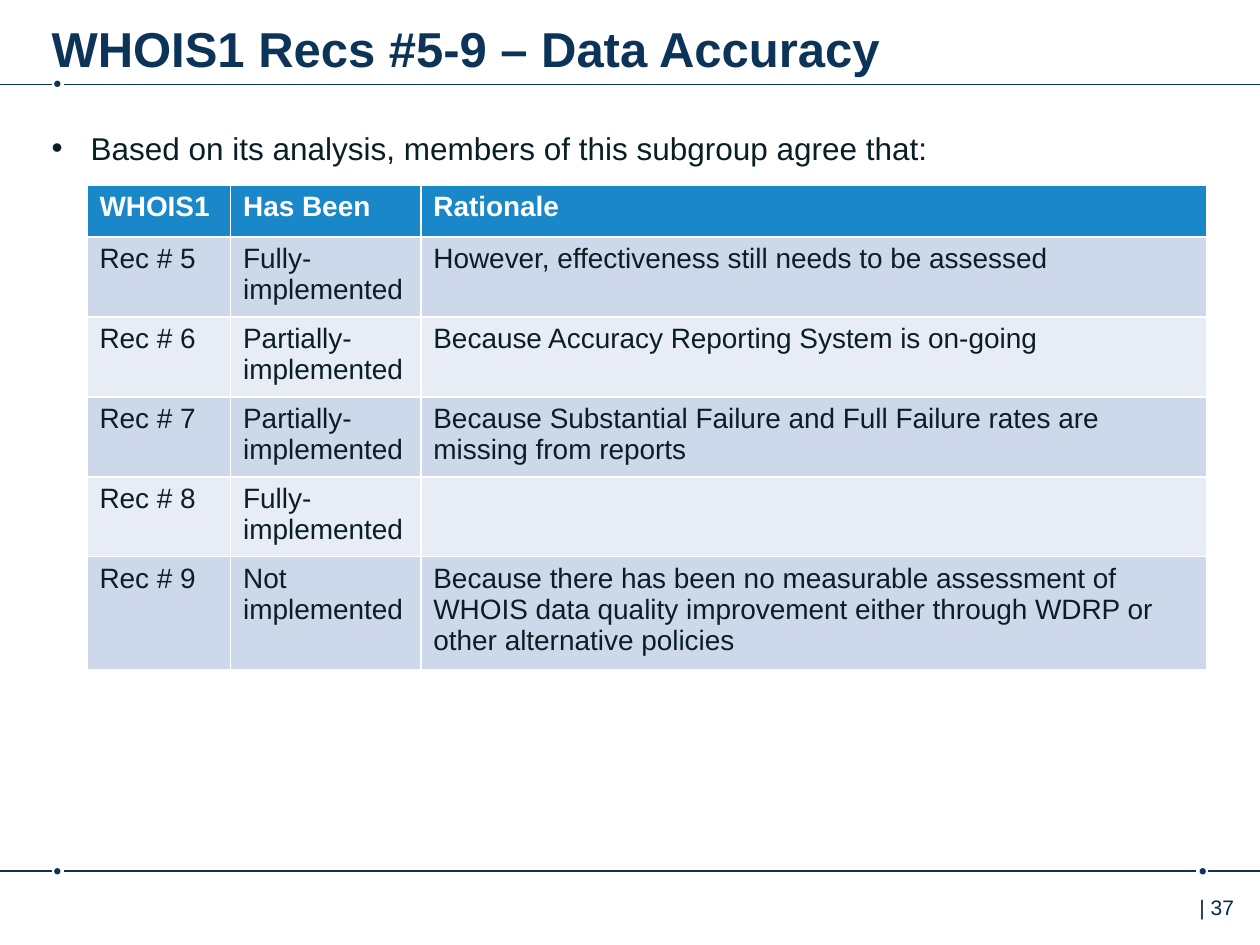
from lxml import etree
from pptx import Presentation
from pptx.dml.color import RGBColor
from pptx.enum.shapes import MSO_CONNECTOR, MSO_SHAPE
from pptx.enum.text import MSO_ANCHOR, PP_ALIGN
from pptx.oxml.ns import qn
from pptx.util import Inches, Pt

NAVY = RGBColor(0x0C, 0x34, 0x58)
INK = RGBColor(0x0A, 0x1F, 0x24)
PAGE = RGBColor(0x00, 0x2B, 0x49)
WHITE = RGBColor(0xFF, 0xFF, 0xFF)
BLUE = RGBColor(0x1A, 0x87, 0xC9)
BANDS = [RGBColor(0xE8, 0xED, 0xF5), RGBColor(0xCD, 0xD9, 0xEB)]


def style(para, size, color, bold=False):
    font = para.font
    for item in [font] + [run.font for run in para.runs]:
        item.name = "Arial"
        item.size = Pt(size)
        item.bold = bold
        item.color.rgb = color


def place(shape, left, top, width, height):
    shape.left, shape.top = Inches(left), Inches(top)
    shape.width, shape.height = Inches(width), Inches(height)


prs = Presentation()
prs.slide_width, prs.slide_height = Inches(10), Inches(7.5)
slide = prs.slides.add_slide(prs.slide_layouts[1])
shapes = slide.shapes

# Rules with dots
for left, top in [(0.43, 0.64), (0.43, 6.89), (9.52, 6.89)]:
    dot = shapes.add_shape(MSO_SHAPE.OVAL, Inches(left), Inches(top),
                           Inches(0.05), Inches(0.05))
    dot.shadow.inherit = False
    dot.fill.solid()
    dot.fill.fore_color.rgb = NAVY
    dot.line.fill.background()

for start, end, y in [(0.41, 0, 0.67), (10, 0.51, 0.67), (0.41, 0, 6.91),
                      (9.49, 0.51, 6.91), (9.59, 10, 6.91)]:
    rule = shapes.add_connector(MSO_CONNECTOR.STRAIGHT, Inches(start),
                                Inches(y), Inches(end), Inches(y))
    rule.line.color.rgb = NAVY
    rule.line.width = Pt(1)
    etree.SubElement(rule._element.spPr, qn("a:effectLst"))

# Page number
page = shapes.add_textbox(Inches(9.29), Inches(7.05), Inches(0.87), Inches(0.4))
frame = page.text_frame
frame.word_wrap = True
frame.margin_left = Inches(0.23)
frame.text = "| 37"
style(frame.paragraphs[0], 12, PAGE)

# Title
title = shapes.title
place(title, 0.41, 0.05, 8.76, 0.49)
frame = title.text_frame
frame.margin_left = frame.margin_right = 0
frame.vertical_anchor = MSO_ANCHOR.TOP
frame.text = "WHOIS1 Recs #5-9 – Data Accuracy"
para = frame.paragraphs[0]
para.alignment = PP_ALIGN.LEFT
para.line_spacing = 1.1
style(para, 28, NAVY, True)

# Lead bullet
body = slide.placeholders[1]
place(body, 0.41, 0.99, 9.13, 0.3)
frame = body.text_frame
frame.margin_left = frame.margin_right = 0
frame.margin_top = frame.margin_bottom = 0
frame.text = "Based on its analysis, members of this subgroup agree that:"
para = frame.paragraphs[0]
para.line_spacing = 1.1
para.space_before = Pt(0)
props = para._p.get_or_add_pPr()
props.set("marL", str(Inches(0.31)))
props.set("indent", str(-Inches(0.31)))
etree.SubElement(props, qn("a:buFont")).set("typeface", "Arial")
etree.SubElement(props, qn("a:buChar")).set("char", "•")
style(para, 18, INK)

# Table of recommendations
rows = [
    ("WHOIS1", "Has Been", "Rationale"),
    ("Rec # 5", "Fully-implemented",
     "However, effectiveness still needs to be assessed"),
    ("Rec # 6", "Partially-implemented",
     "Because Accuracy Reporting System is on-going"),
    ("Rec # 7", "Partially-implemented",
     "Because Substantial Failure and Full Failure rates are missing "
     "from reports"),
    ("Rec # 8", "Fully-implemented", ""),
    ("Rec # 9", "Not implemented",
     "Because there has been no measurable assessment of WHOIS data quality "
     "improvement either through WDRP or other alternative policies"),
]
table = shapes.add_table(len(rows), 3, Inches(0.69), Inches(1.47),
                         Inches(8.89), Inches(3.84)).table
for col, width in zip(table.columns, [1.14, 1.51, 6.24]):
    col.width = Inches(width)
for row, height in zip(table.rows, [0.41] + [0.635] * 4 + [0.89]):
    row.height = Inches(height)
for r, texts in enumerate(rows):
    head = r == 0
    for c, text in enumerate(texts):
        cell = table.cell(r, c)
        cell.fill.solid()
        cell.fill.fore_color.rgb = BLUE if head else BANDS[r % 2]
        cell.text_frame.text = text
        style(cell.text_frame.paragraphs[0], 16, WHITE if head else INK, head)

prs.save("out.pptx")
